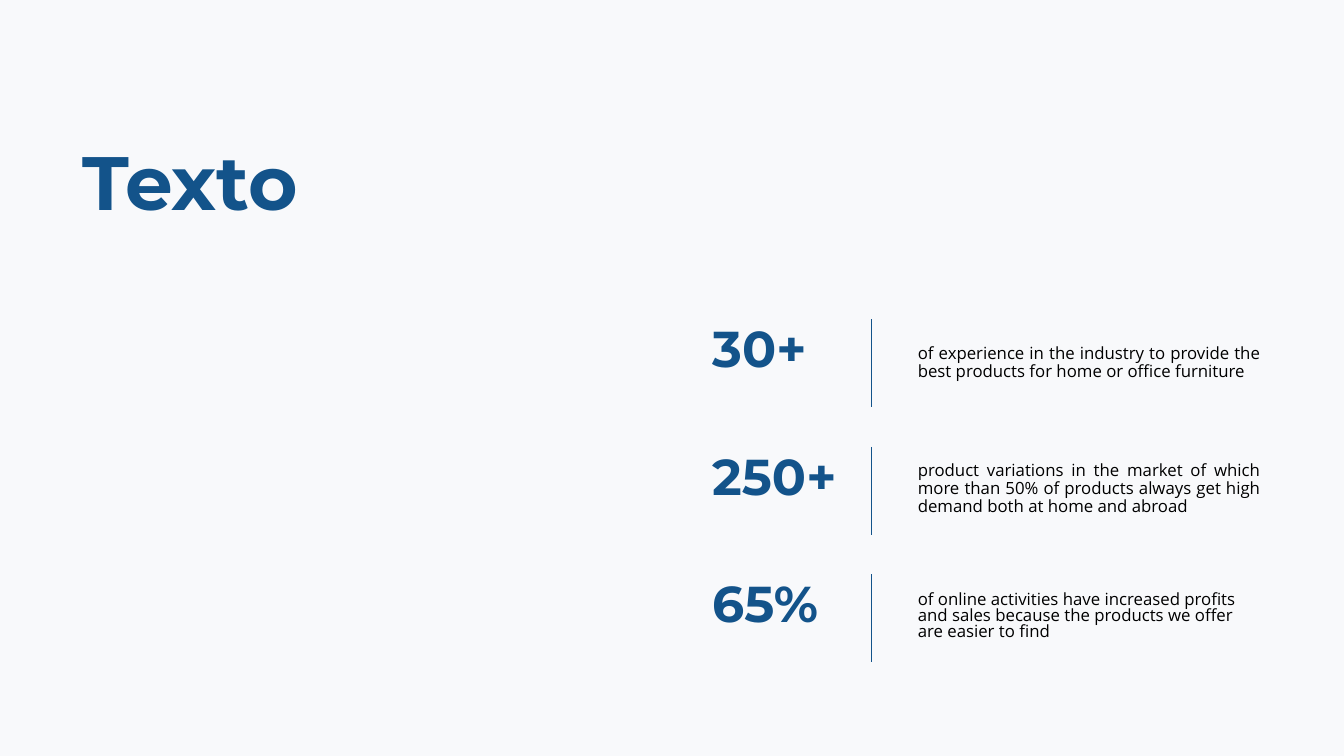
from lxml import etree
from pptx import Presentation
from pptx.dml.color import RGBColor
from pptx.enum.shapes import MSO_CONNECTOR
from pptx.enum.text import MSO_ANCHOR, PP_ALIGN
from pptx.oxml.ns import qn
from pptx.util import Cm, Pt

STRAIGHT = MSO_CONNECTOR.STRAIGHT
TOP = MSO_ANCHOR.TOP
LEFT, JUSTIFY = PP_ALIGN.LEFT, PP_ALIGN.JUSTIFY
BLUE = RGBColor(0x13, 0x53, 0x8A)
BLACK = RGBColor(0x00, 0x00, 0x00)
PALE = RGBColor(0xF8, 0xF9, 0xFB)

prs = Presentation()
prs.slide_width, prs.slide_height = Cm(33.87), Cm(19.05)
s = prs.slides.add_slide(prs.slide_layouts[6])
s.background.fill.solid()
s.background.fill.fore_color.rgb = PALE


def add_text(text, x, y, w, h, font, size, color, bold=False, align=LEFT, spacing=0.9):
    tf = s.shapes.add_textbox(Cm(x), Cm(y), Cm(w), Cm(h)).text_frame
    tf.word_wrap = True
    tf.vertical_anchor = TOP
    p = tf.paragraphs[0]
    p.text = text
    p.alignment = align
    p.line_spacing = spacing
    p.font.name = font
    p.font.size = Pt(size)
    p.font.bold = bold
    p.font.color.rgb = color


add_text("Texto", 1.83, 3.53, 13.74, 2.08, "Montserrat", 54, BLUE, bold=True)

facts = [
    ("30+", "of experience in the industry to provide the best products "
     "for home or office furniture", 8.56, 1.32, JUSTIFY, 0.9),
    ("250+", "product variations in the market of which more than 50% of products "
     "always get high demand both at home and abroad", 11.51, 1.7, JUSTIFY, 0.9),
    ("65%", "of online activities have increased profits and sales because "
     "the products we offer are easier to find", 14.81, 1.42, LEFT, 0.79),
]
for i, (figure, detail, detail_y, detail_h, align, spacing) in enumerate(facts):
    y = 8.05 + i * 3.21
    add_text(figure, 17.7, y, 3.82, 1.42, "Montserrat", 36, BLUE, bold=True)
    add_text(detail, 22.88, detail_y, 9.14, detail_h, "Open Sans", 12, BLACK,
             align=align, spacing=spacing)
    divider = s.shapes.add_connector(STRAIGHT, Cm(21.97), Cm(y), Cm(21.97), Cm(y + 2.21))
    divider.line.color.rgb = BLUE
    divider.line.width = Pt(0.5)
    etree.SubElement(divider._element.spPr, qn("a:effectLst"))

prs.save("out.pptx")
